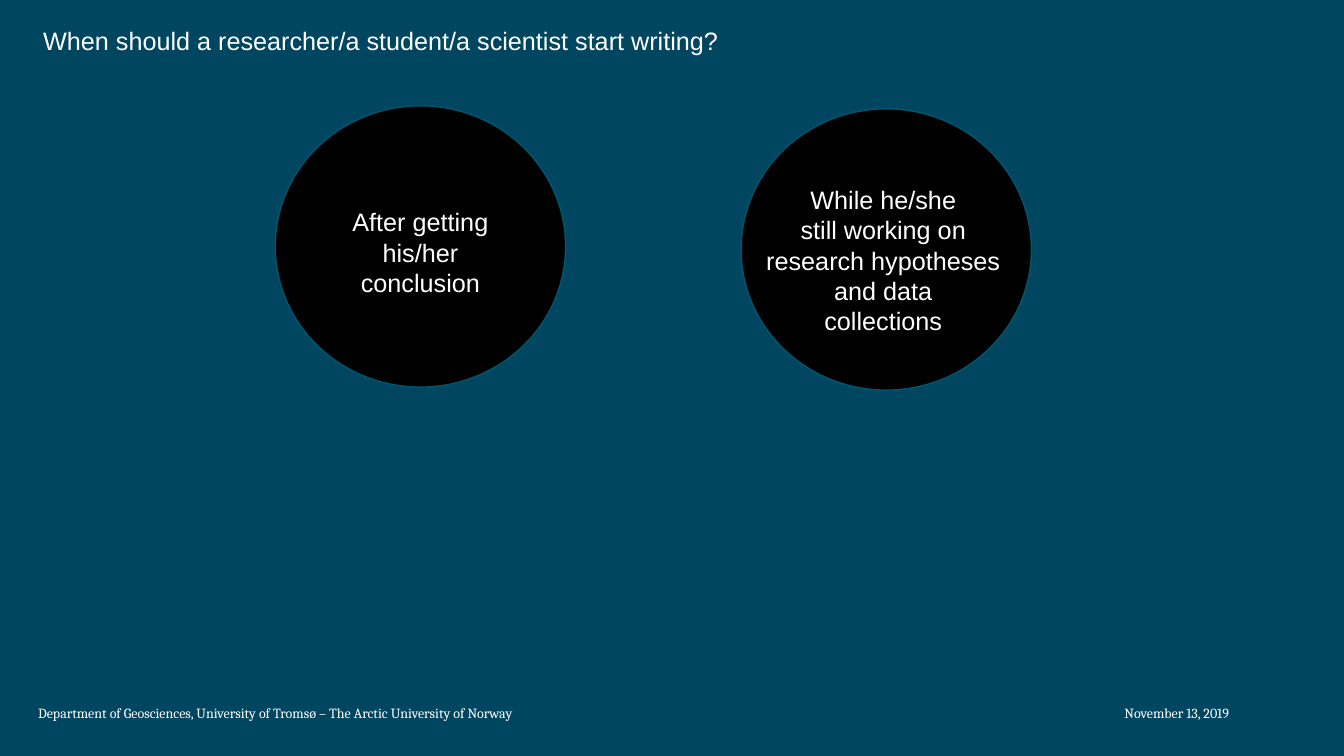
from dataclasses import dataclass

from lxml import etree
from pptx import Presentation
from pptx.dml.color import RGBColor
from pptx.enum.shapes import MSO_SHAPE
from pptx.enum.text import MSO_AUTO_SIZE, PP_ALIGN
from pptx.oxml.ns import qn
from pptx.slide import Slide
from pptx.text.text import _Paragraph
from pptx.util import Inches, Pt

ELLIPSE = MSO_SHAPE.OVAL
LEFT, CENTER = PP_ALIGN.LEFT, PP_ALIGN.CENTER
FIT_SHAPE = MSO_AUTO_SIZE.SHAPE_TO_FIT_TEXT

TEAL = RGBColor(0x00, 0x46, 0x60)
OUTLINE = RGBColor(0x00, 0x55, 0x6F)
BLACK = RGBColor(0x00, 0x00, 0x00)
WHITE = RGBColor(0xFF, 0xFF, 0xFF)

CIRCLE_WIDTH, CIRCLE_HEIGHT = 2.88, 2.79
DATE_TAB = 11.81


@dataclass(frozen=True)
class Label:
    left: float
    top: float
    width: float
    height: float
    lines: tuple[str, ...]
    align: PP_ALIGN = LEFT
    font: str = "Arial"
    size: int = 18


@dataclass(frozen=True)
class Answer:
    left: float
    top: float
    label: Label


QUESTION = Label(0.33, 0.2, 6.96, 0.4,
                 ("When should a researcher/a student/a scientist start writing?",))
ANSWERS = (
    Answer(2.73, 1.05, Label(3.39, 2, 1.56, 1.01,
                             ("After getting", "his/her", "conclusion"), CENTER)),
    Answer(7.35, 1.08, Label(7.49, 1.78, 2.54, 1.62,
                             ("While he/she", "still working on", "research hypotheses",
                              "and data", "collections"), CENTER)),
)
FOOTER = Label(0.28, 6.94, 12.82, 0.27,
               ("Department of Geosciences, University of Tromsø – "
                "The Arctic University of Norway\tNovember 13, 2019",),
               font="Cambria", size=10)


def add_right_tab(paragraph: _Paragraph, position: float) -> None:
    properties = paragraph._p.get_or_add_pPr()
    tabs = etree.SubElement(properties, qn("a:tabLst"))
    etree.SubElement(tabs, qn("a:tab"), pos=str(Inches(position)), algn="r")


def add_label(slide: Slide, label: Label) -> None:
    box = slide.shapes.add_textbox(Inches(label.left), Inches(label.top),
                                   Inches(label.width), Inches(label.height))
    frame = box.text_frame
    frame.word_wrap = any("\t" in line for line in label.lines)
    frame.auto_size = FIT_SHAPE
    frame.text = "\n".join(label.lines)
    for paragraph, line in zip(frame.paragraphs, label.lines):
        if "\t" in line:
            add_right_tab(paragraph, DATE_TAB)
        paragraph.alignment = label.align
        paragraph.font.name = label.font
        paragraph.font.size = Pt(label.size)
        paragraph.font.color.rgb = WHITE


def add_answer(slide: Slide, answer: Answer) -> None:
    circle = slide.shapes.add_shape(ELLIPSE, Inches(answer.left), Inches(answer.top),
                                    Inches(CIRCLE_WIDTH), Inches(CIRCLE_HEIGHT))
    circle.shadow.inherit = False
    circle.fill.solid()
    circle.fill.fore_color.rgb = BLACK
    circle.line.color.rgb = OUTLINE
    circle.line.width = Pt(1)
    add_label(slide, answer.label)


def main() -> None:
    presentation = Presentation()
    presentation.slide_width = Inches(13.33)
    presentation.slide_height = Inches(7.5)
    slide = presentation.slides.add_slide(presentation.slide_layouts[6])

    # Background
    slide.background.fill.solid()
    slide.background.fill.fore_color.rgb = TEAL

    # Question, its two answers and the footer
    add_label(slide, QUESTION)
    for answer in ANSWERS:
        add_answer(slide, answer)
    add_label(slide, FOOTER)

    presentation.save("out.pptx")


if __name__ == "__main__":
    main()
